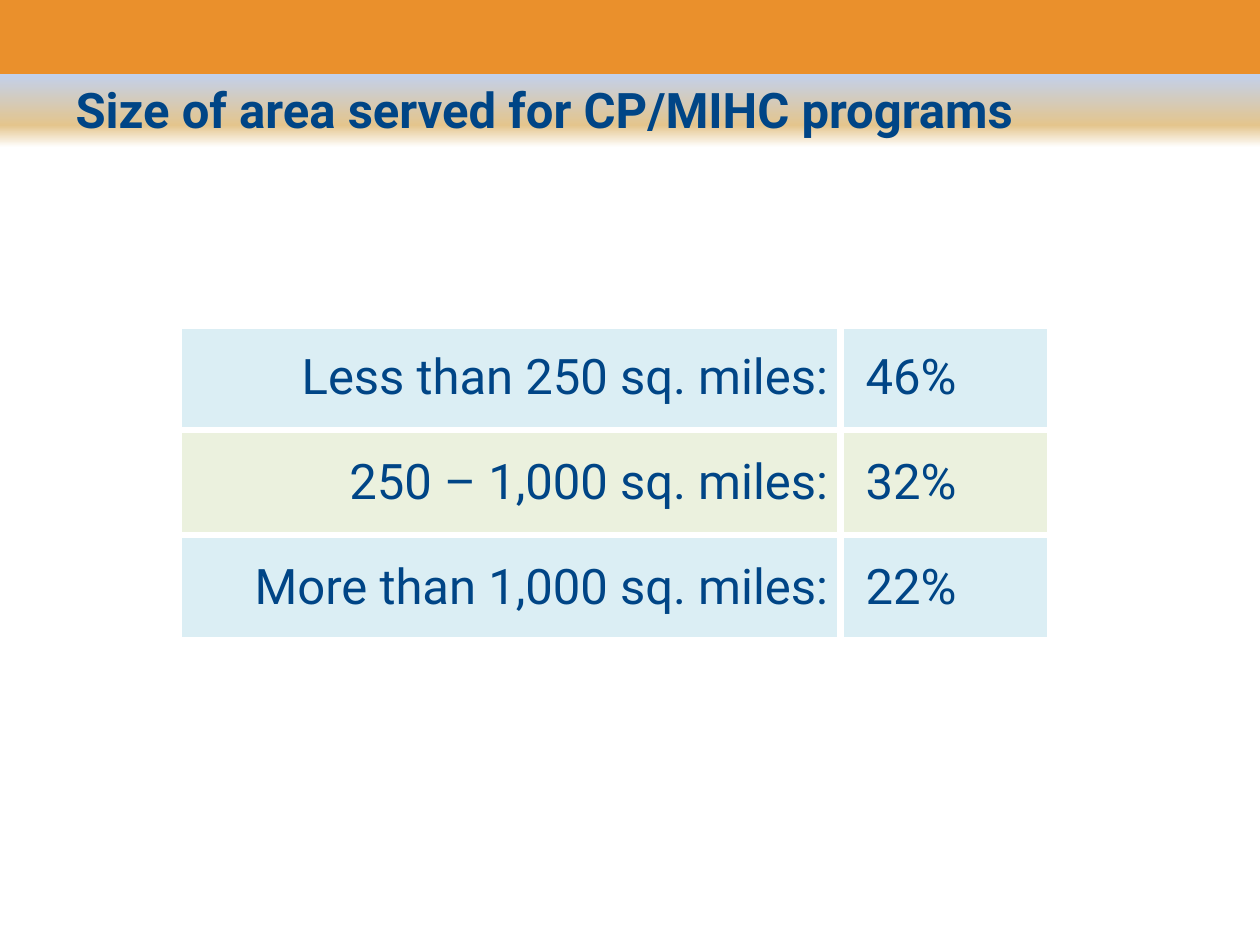
from dataclasses import dataclass

from lxml import etree
from pptx import Presentation
from pptx.dml.color import RGBColor
from pptx.enum.shapes import MSO_SHAPE
from pptx.enum.text import MSO_ANCHOR, MSO_AUTO_SIZE, PP_ALIGN
from pptx.oxml.ns import qn
from pptx.slide import Slide
from pptx.table import _Cell
from pptx.text.text import _Paragraph
from pptx.util import Inches, Pt

RECTANGLE = MSO_SHAPE.RECTANGLE
TOP, MIDDLE = MSO_ANCHOR.TOP, MSO_ANCHOR.MIDDLE
LEFT, RIGHT = PP_ALIGN.LEFT, PP_ALIGN.RIGHT
NO_AUTOFIT = MSO_AUTO_SIZE.NONE

TITLE_ONLY_LAYOUT = 5
NAVY = "004586"
WHITE = "FFFFFF"
ROW_FILLS = ("DBEEF4", "EBF1DE")
BORDER_WIDTH = Pt(4.5)
TEXT_FORMAT = {"name": "Roboto", "size": Pt(28)}


@dataclass(frozen=True)
class GradientStop:
    percent: int
    color: str


@dataclass(frozen=True)
class AreaShare:
    area: str
    share: str


BAND_STOPS = (
    GradientStop(50, "EA902C"),
    GradientStop(50, "C2D1ED"),
    GradientStop(85, "E4C58D"),
    GradientStop(100, WHITE),
)
AREA_SHARES = (
    AreaShare("Less than 250 sq. miles:", "46%"),
    AreaShare("250 – 1,000 sq. miles:", "32%"),
    AreaShare("More than 1,000 sq. miles:", "22%"),
)


def rgb(color: str) -> RGBColor:
    return RGBColor.from_string(color)


def format_text(paragraph: _Paragraph, alignment: PP_ALIGN, bold: bool) -> None:
    paragraph.alignment = alignment
    font = paragraph.runs[0].font
    for attribute, value in {**TEXT_FORMAT, "bold": bold}.items():
        setattr(font, attribute, value)
    font.color.rgb = rgb(NAVY)


def add_header_band(slide: Slide) -> None:
    """Add the vertical gradient band behind everything else."""
    band = slide.shapes.add_shape(RECTANGLE, 0, 0, Inches(10), Inches(1.17))
    band.shadow.inherit = False
    band.line.fill.background()
    band.fill.gradient()
    gradient = band.fill._xPr.find(qn("a:gradFill"))
    stop_list = gradient.find(qn("a:gsLst"))
    for old_stop in list(stop_list):
        stop_list.remove(old_stop)
    for stop in BAND_STOPS:
        element = etree.SubElement(stop_list, qn("a:gs"), pos=str(stop.percent * 1000))
        etree.SubElement(element, qn("a:srgbClr"), val=stop.color)
    gradient.find(qn("a:lin")).set("ang", str(90 * 60000))
    slide.shapes._spTree.insert(2, band._element)


def set_title(slide: Slide, text: str) -> None:
    title = slide.shapes.title
    title.left, title.top = Inches(0.5), Inches(0.58)
    title.width, title.height = Inches(9), Inches(1.25)
    frame = title.text_frame
    frame.text = text
    frame.auto_size = NO_AUTOFIT
    frame.vertical_anchor = TOP
    format_text(frame.paragraphs[0], LEFT, bold=True)


def set_borders(cell: _Cell) -> None:
    properties = cell._tc.get_or_add_tcPr()
    for position, side in enumerate(("a:lnL", "a:lnR", "a:lnT", "a:lnB")):
        line = etree.Element(qn(side), w=str(BORDER_WIDTH))
        fill = etree.SubElement(line, qn("a:solidFill"))
        etree.SubElement(fill, qn("a:srgbClr"), val=WHITE)
        properties.insert(position, line)


def fill_cell(cell: _Cell, text: str, alignment: PP_ALIGN, color: str) -> None:
    cell.text = text
    cell.vertical_anchor = MIDDLE
    cell.fill.solid()
    cell.fill.fore_color.rgb = rgb(color)
    set_borders(cell)
    format_text(cell.text_frame.paragraphs[0], alignment, bold=False)


def add_area_table(slide: Slide) -> None:
    table = slide.shapes.add_table(
        len(AREA_SHARES), 2, Inches(1.42), Inches(2.58), Inches(6.92), Inches(2.5)
    ).table
    table.first_row = False
    table.horz_banding = False
    for column, width in zip(table.columns, (5.25, 1.67)):
        column.width = Inches(width)
    for index, row in enumerate(AREA_SHARES):
        color = ROW_FILLS[index % len(ROW_FILLS)]
        area_cell, share_cell = table.rows[index].cells
        fill_cell(area_cell, row.area, RIGHT, color)
        fill_cell(share_cell, row.share, LEFT, color)
        share_cell.margin_left = Inches(0.2)


def main() -> None:
    presentation = Presentation()
    presentation.slide_width = Inches(10)
    presentation.slide_height = Inches(7.5)
    layout = presentation.slide_layouts[TITLE_ONLY_LAYOUT]
    slide = presentation.slides.add_slide(layout)
    add_header_band(slide)
    set_title(slide, "Size of area served for CP/MIHC programs")
    add_area_table(slide)
    presentation.save("out.pptx")


if __name__ == "__main__":
    main()
